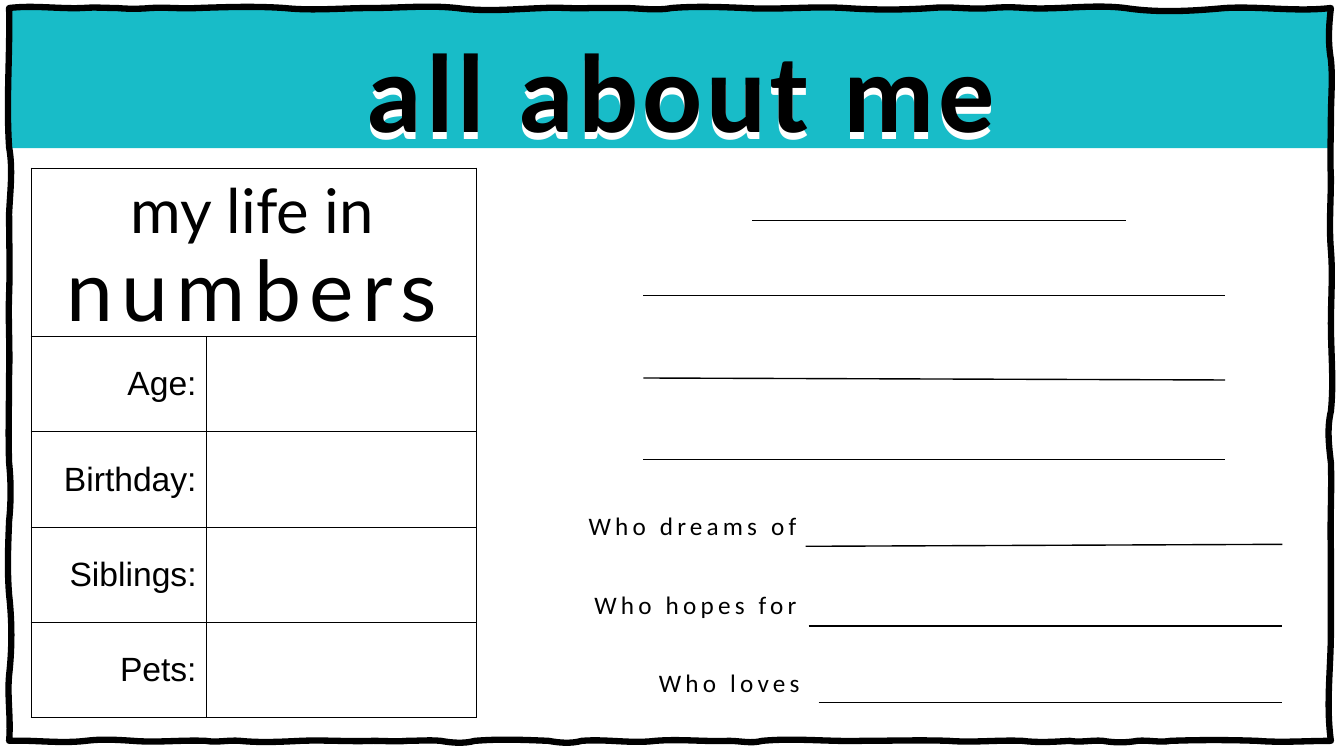
import pptx
import pptx.dml.color
import pptx.enum.shapes
import pptx.enum.text
import pptx.oxml
import pptx.oxml.ns
import pptx.util
from pptx.util import Inches

BLACK = pptx.dml.color.RGBColor(0x00, 0x00, 0x00)
WHITE = pptx.dml.color.RGBColor(0xFF, 0xFF, 0xFF)
TEAL = pptx.dml.color.RGBColor(0x18, 0xBC, 0xC8)
CENTER = pptx.enum.text.PP_ALIGN.CENTER
RIGHT = pptx.enum.text.PP_ALIGN.RIGHT
NAMESPACE = pptx.oxml.ns.nsdecls("a")

FRAME_LEFT, FRAME_TOP, FRAME_RIGHT, FRAME_BOTTOM = 0.09, 0.08, 13.2, 7.35
TOP_WAVES = [
    (-3, 1, 0.82), (-1, 0, 1.16), (1, 1, 1.49), (-1, 1, 1.96), (-1, -2, 2.82),
    (3, 0, 3.68), (0, -3, 4.53), (4, 1, 5.39), (-1, 1, 5.86), (0, 0, 6.19),
    (0, 3, 6.66), (-2, -1, 7.39), (2, -2, 8.38), (2, 2, 9.24), (-2, 2, 9.83),
    (-1, -1, 10.17), (2, -4, 11.16), (5, 3, 12.15), (-2, 4, FRAME_RIGHT)]
RIGHT_WAVES = [
    (-2, -3, 0.59), (2, 0, 1.17), (0, -1, 1.76), (0, -2, 2.48), (2, 0, 3.21),
    (0, 3, 4.08), (-4, -2, 4.59), (1, -1, 5.46), (0, 0, 6.26), (0, -5, FRAME_BOTTOM)]
BOTTOM_WAVES = [
    (0, 2, 12.47), (-1, -1, 11.61), (2, -1, 11.28), (2, 2, 10.94), (-1, 2, 10.61),
    (1, 2, 10.14), (-1, 2, 9.41), (-1, 0, 8.55), (1, -3, 7.56), (3, 0, 7.23),
    (1, -2, 6.5), (3, -2, 5.77), (3, 2, 5.44), (-1, -2, 4.71), (3, 2, 4.37),
    (-1, 0, 4.04), (1, 0, 3.7), (1, -1, 2.98), (1, 2, 2.38), (-1, 2, 2.04),
    (-1, 2, 1.32), (-1, -2, 0.85), (3, -1, FRAME_LEFT)]
LEFT_WAVES = [
    (2, -2, 6.7), (3, 3, 5.9), (-2, -1, 5.17), (2, 2, 4.59), (-1, 0, 3.72),
    (1, -1, 2.92), (1, 0, 2.12), (1, 4, 1.46), (-3, 1, FRAME_TOP)]


def wavy_edge(start, base, waves, vertical=False):
    """Return one curve per wave: two control points, then the end point."""
    curves = []
    for first_bulge, second_bulge, stop in waves:
        third = (stop - start) / 3
        curve = [(start + third, base + first_bulge / 100),
                 (stop - third, base + second_bulge / 100), (stop, base)]
        curves.append([point[::-1] for point in curve] if vertical else curve)
        start = stop
    return curves


class Worksheet:
    """Holds the slide and draws its elements in one style."""

    def __init__(self, slide, color=BLACK, line_width=1):
        self.slide = slide
        self.color = color
        self.line_width = line_width

    def run(self, paragraph, text, font, size, color=None, bold=False, spacing=0, outline=0):
        run = paragraph.add_run()
        run.text = text
        run.font.name = font
        run.font.size = pptx.util.Pt(size)
        run.font.bold = bold
        run.font.color.rgb = color or self.color
        properties = run.font._element
        if spacing:
            properties.set("spc", str(spacing * 100))
        if outline:
            properties.insert(0, self.line_xml("ln", outline))

    def line_xml(self, tag, width):
        return pptx.oxml.parse_xml(
            f'<a:{tag} {NAMESPACE} w="{int(pptx.util.Pt(width))}"><a:solidFill>'
            f'<a:srgbClr val="{self.color}"/></a:solidFill></a:{tag}>')

    def text(self, left, top, width, height, text, font, size, align=CENTER, **style):
        box = self.slide.shapes.add_textbox(
            Inches(left), Inches(top), Inches(width), Inches(height))
        frame = box.text_frame
        frame.word_wrap = True
        frame.auto_size = pptx.enum.text.MSO_AUTO_SIZE.SHAPE_TO_FIT_TEXT
        paragraph = frame.paragraphs[0]
        paragraph.alignment = align
        self.run(paragraph, text, font, size, **style)

    def banner(self, left, top, width, height, color):
        shape = self.slide.shapes.add_shape(
            pptx.enum.shapes.MSO_SHAPE.RECTANGLE,
            Inches(left), Inches(top), Inches(width), Inches(height))
        shape.shadow.inherit = False
        shape.fill.solid()
        shape.fill.fore_color.rgb = color
        shape.line.fill.background()

    def frame(self, curves, width):
        stops = [(Inches(x), Inches(y)) for *controls, (x, y) in curves]
        builder = self.slide.shapes.build_freeform(*stops[-1], scale=1.0)
        builder.add_line_segments(stops, close=True)
        shape = builder.convert_to_shape()
        shape.shadow.inherit = False
        shape.fill.background()
        shape.line.color.rgb = self.color
        shape.line.width = pptx.util.Pt(width)
        for segment, curve in zip(shape._element.xpath(".//a:lnTo"), curves):
            points = "".join(
                f'<a:pt x="{Inches(x) - shape.left}" y="{Inches(y) - shape.top}"/>'
                for x, y in curve)
            segment.getparent().replace(segment, pptx.oxml.parse_xml(
                f"<a:cubicBezTo {NAMESPACE}>{points}</a:cubicBezTo>"))

    def line(self, left, start_y, right, end_y):
        connector = self.slide.shapes.add_connector(
            pptx.enum.shapes.MSO_CONNECTOR.STRAIGHT,
            Inches(left), Inches(start_y), Inches(right), Inches(end_y))
        connector.line.color.rgb = self.color
        connector.line.width = pptx.util.Pt(self.line_width)
        connector._element.spPr.append(pptx.oxml.parse_xml(f"<a:effectLst {NAMESPACE}/>"))

    def table(self, left, top, widths, heights, labels):
        table = self.slide.shapes.add_table(
            len(heights), len(widths), Inches(left), Inches(top),
            Inches(sum(widths)), Inches(sum(heights))).table
        table.first_row = table.horz_banding = False
        for column, width in zip(table.columns, widths):
            column.width = Inches(width)
        for row, height in zip(table.rows, heights):
            row.height = Inches(height)
        for cell in table.iter_cells():
            cell.vertical_anchor = pptx.enum.text.MSO_ANCHOR.MIDDLE
            cell.fill.background()
            properties = cell._tc.get_or_add_tcPr()
            for position, side in enumerate(("lnL", "lnR", "lnT", "lnB")):
                properties.insert(position, self.line_xml(side, self.line_width))
        table.cell(0, 0).merge(table.cell(0, len(widths) - 1))
        for row, label in enumerate(labels, 1):
            paragraph = table.cell(row, 0).text_frame.paragraphs[0]
            paragraph.alignment = RIGHT
            self.run(paragraph, label, "Arial", 24)


def main():
    presentation = pptx.Presentation()
    presentation.slide_width = Inches(13.33)
    presentation.slide_height = Inches(7.5)
    slide = presentation.slides.add_slide(presentation.slide_layouts[6])
    sheet = Worksheet(slide)

    labels = ["Age:", "Birthday:", "Siblings:", "Pets:"]
    title_height, table_height = 1.67, 5.45
    label_height = (table_height - title_height) / len(labels)
    sheet.table(0.31, 1.67, [1.74, 2.68],
                [title_height] + [label_height] * len(labels), labels)
    sheet.banner(FRAME_LEFT, FRAME_TOP, 13.1, 1.39, TEAL)
    sheet.frame(
        wavy_edge(FRAME_LEFT, FRAME_TOP, TOP_WAVES)
        + wavy_edge(FRAME_TOP, FRAME_RIGHT, RIGHT_WAVES, vertical=True)
        + wavy_edge(FRAME_RIGHT, FRAME_BOTTOM, BOTTOM_WAVES)
        + wavy_edge(FRAME_BOTTOM, FRAME_LEFT, LEFT_WAVES, vertical=True), 4.5)

    for top, color, outline in [(0.22, WHITE, 0), (0.15, BLACK, 0.75)]:
        sheet.text(0.94, top, 11.64, 1.45, "all about me", "Calibri", 80,
                   color=color, bold=True, spacing=3, outline=outline)
    sheet.text(0.29, 2.31, 4.42, 1.11, "numbers", "Lato", 60, spacing=6)
    sheet.text(0.76, 1.66, 3.49, 0.84, "my life in", "Lato", 44)

    for start_y, end_y in [(2.93, 2.93), (3.75, 3.77), (4.56, 4.56)]:
        sheet.line(6.38, start_y, 12.15, end_y)
    sheet.line(7.46, 2.19, 11.17, 2.19)

    prompts = [
        ("Who dreams of", 5.46, 5.01, 7.99, 5.42, 5.4),
        ("Who hopes for", 5.46, 5.8, 8.02, 6.21, 6.21),
        ("Who loves", 5.49, 6.57, 8.12, 6.97, 6.97)]
    for prompt, left, top, line_left, start_y, end_y in prompts:
        sheet.line(line_left, start_y, 12.72, end_y)
        sheet.text(left, top, 2.54, 0.4, prompt, "Calibri", 18, align=RIGHT, spacing=3)

    presentation.save("out.pptx")


if __name__ == "__main__":
    main()
